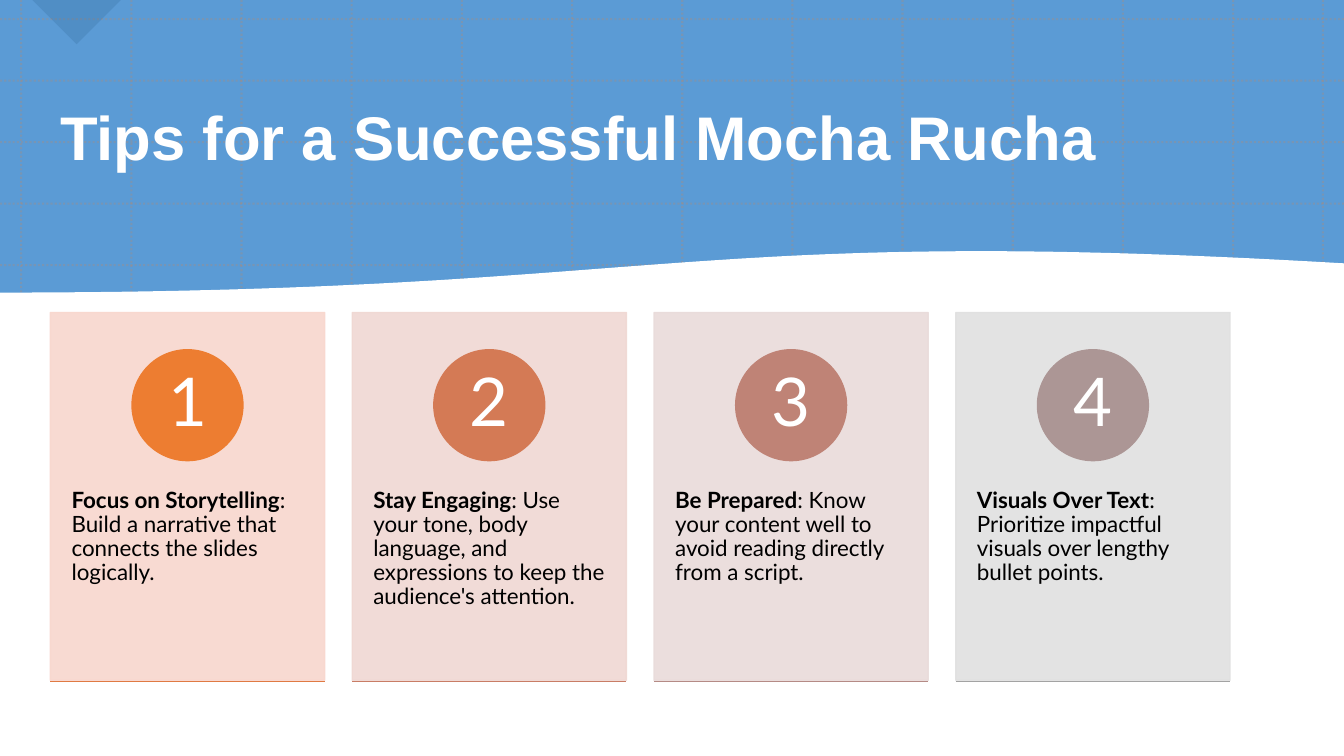
"""Builds the slide with four numbered tips for a Mocha Rucha talk."""
from lxml.etree import SubElement
from pptx import Presentation
from pptx.dml.color import RGBColor
from pptx.enum.dml import MSO_LINE
from pptx.enum.shapes import MSO_CONNECTOR, MSO_SHAPE
from pptx.enum.text import MSO_ANCHOR, PP_ALIGN
from pptx.oxml.ns import qn
from pptx.util import Inches, Pt

TITLE = "Tips for a Successful Mocha Rucha"
TIPS = [
    ("Focus on Storytelling", ": Build a narrative that connects the slides logically.",
     "F8D7CE", "ED7D31", "E07A43"),
    ("Stay Engaging", ": Use your tone, body language, and expressions to keep the audience's attention.",
     "F0D8D3", "D47A55", "C97D66"),
    ("Be Prepared", ": Know your content well to avoid reading directly from a script.",
     "E9DBDA", "BF8376", "B58B86"),
    ("Visuals Over Text", ": Prioritize impactful visuals over lengthy bullet points.",
     "E0E0E0", "AC9695", "A3A3A3"),
]
WIDTH, HEIGHT = 13.33, 7.5
BLUE, NAVY, ORANGE, WHITE, BLACK = "5B9BD5", "1F4E79", "ED7D31", "FFFFFF", "000000"
GRID_X = [0.21 + i * (12.23 - 0.21) / 11 for i in range(12)] + [13.12]
GRID_Y = [0.19 + i * 0.61 for i in range(5)]
WAVE = [(0, 2.91), (6.65, 2.91), (6.69, 2.23), (WIDTH, 2.62)]
WAVE_STEPS = 60
CARD_LEFT, CARD_TOP, CARD_WIDTH, CARD_HEIGHT = 0.5, 3.1, 2.72, 3.65
CARD_PITCH = (9.48 - 0.5) / 3
CIRCLE, CIRCLE_TOP, NUMBER = 1.1, 3.47, 0.78


def color(value):
    return RGBColor.from_string(value)


def set_opacity(shape, percent):
    for tint in shape.element.spPr.iter(qn("a:srgbClr")):
        SubElement(tint, qn("a:alpha"), val=str(percent * 1000))


def paint(shape, fill, outline=False, opacity=100):
    shape.shadow.inherit = False
    shape.fill.solid()
    shape.fill.fore_color.rgb = color(fill)
    if outline:
        shape.line.color.rgb = color(fill)
        shape.line.width = Pt(1)
    else:
        shape.line.fill.background()
    if opacity < 100:
        set_opacity(shape, opacity)
    return shape


def add_shape(page, kind, box, fill, **style):
    return paint(page.shapes.add_shape(kind, *map(Inches, box)), fill, **style)


def add_line(page, start, end, tint, width):
    line = page.shapes.add_connector(MSO_CONNECTOR.STRAIGHT, *map(Inches, start + end))
    line.line.color.rgb = color(tint)
    line.line.width = Pt(width)
    SubElement(line.element.spPr, qn("a:effectLst"))
    return line


def add_text(page, box, spans, font, size, tint, insets, anchor=MSO_ANCHOR.TOP, align=PP_ALIGN.LEFT):
    frame = page.shapes.add_textbox(*map(Inches, box)).text_frame
    frame.word_wrap = True
    frame.vertical_anchor = anchor
    (frame.margin_left, frame.margin_top,
     frame.margin_right, frame.margin_bottom) = map(Inches, insets)
    para = frame.paragraphs[0]
    para.alignment = align
    para.line_spacing = 0.9
    for text, bold in spans:
        span = para.add_run()
        span.text = text
        span.font.name = font
        span.font.size = Pt(size)
        span.font.bold = bold
        span.font.color.rgb = color(tint)


def wave_point(t):
    weights = ((1 - t) ** 3, 3 * t * (1 - t) ** 2, 3 * t ** 2 * (1 - t), t ** 3)
    return tuple(Inches(sum(w * point[axis] for w, point in zip(weights, WAVE))) for axis in (0, 1))


def add_banner(page):
    add_shape(page, MSO_SHAPE.RECTANGLE, (0, 0, WIDTH, HEIGHT), BLUE)
    grid = [((x, 0), (x, HEIGHT)) for x in GRID_X] + [((0, y), (WIDTH, y)) for y in GRID_Y]
    for start, end in grid:
        line = add_line(page, start, end, ORANGE, 1.5)
        line.line.dash_style = MSO_LINE.ROUND_DOT
        set_opacity(line, 20)
    corner = add_shape(page, MSO_SHAPE.RIGHT_TRIANGLE, (0.45, -0.31, 0.62, 0.62), NAVY, opacity=17)
    corner.rotation = 315
    curve = [wave_point(i / WAVE_STEPS) for i in range(WAVE_STEPS + 1)]
    bottom = [(Inches(WIDTH), Inches(HEIGHT)), (0, Inches(HEIGHT))]
    builder = page.shapes.build_freeform(*curve[0])
    builder.add_line_segments(curve[1:] + bottom, close=True)
    paint(builder.convert_to_shape(), WHITE, outline=True)
    add_text(page, (0.5, 0.79, 11.75, 1.83), [(TITLE, True)], "Arial", 44, WHITE,
             (0.1, 0.05, 0.1, 0.68), MSO_ANCHOR.MIDDLE)


def add_card(page, index, tip):
    heading, advice, card_fill, circle_fill, rule_tint = tip
    left = CARD_LEFT + index * CARD_PITCH
    bottom = CARD_TOP + CARD_HEIGHT + 0.01
    circle_left = left + (CARD_WIDTH - CIRCLE) / 2
    inset = (CIRCLE - NUMBER) / 2
    add_shape(page, MSO_SHAPE.RECTANGLE, (left, CARD_TOP, CARD_WIDTH, CARD_HEIGHT),
              card_fill, outline=True, opacity=90)
    add_text(page, (left, 4.49, CARD_WIDTH, 2.19), [(heading, True), (advice, False)],
             "Lato", 16, BLACK, (0.21, 0.36, 0.21, 0.36))
    add_shape(page, MSO_SHAPE.OVAL, (circle_left, CIRCLE_TOP, CIRCLE, CIRCLE),
              circle_fill, outline=True)
    add_text(page, (circle_left + inset, CIRCLE_TOP + inset, NUMBER, NUMBER),
             [(str(index + 1), False)], "Lato", 48, WHITE, (0.09, 0.01, 0.09, 0.01),
             MSO_ANCHOR.MIDDLE, PP_ALIGN.CENTER)
    add_line(page, (left, bottom), (left + CARD_WIDTH, bottom), rule_tint, 1)


def main():
    deck = Presentation()
    deck.slide_width, deck.slide_height = Inches(WIDTH), Inches(HEIGHT)
    page = deck.slides.add_slide(deck.slide_layouts[6])
    add_banner(page)
    for index, tip in enumerate(TIPS):
        add_card(page, index, tip)
    deck.save("out.pptx")


if __name__ == "__main__":
    main()
